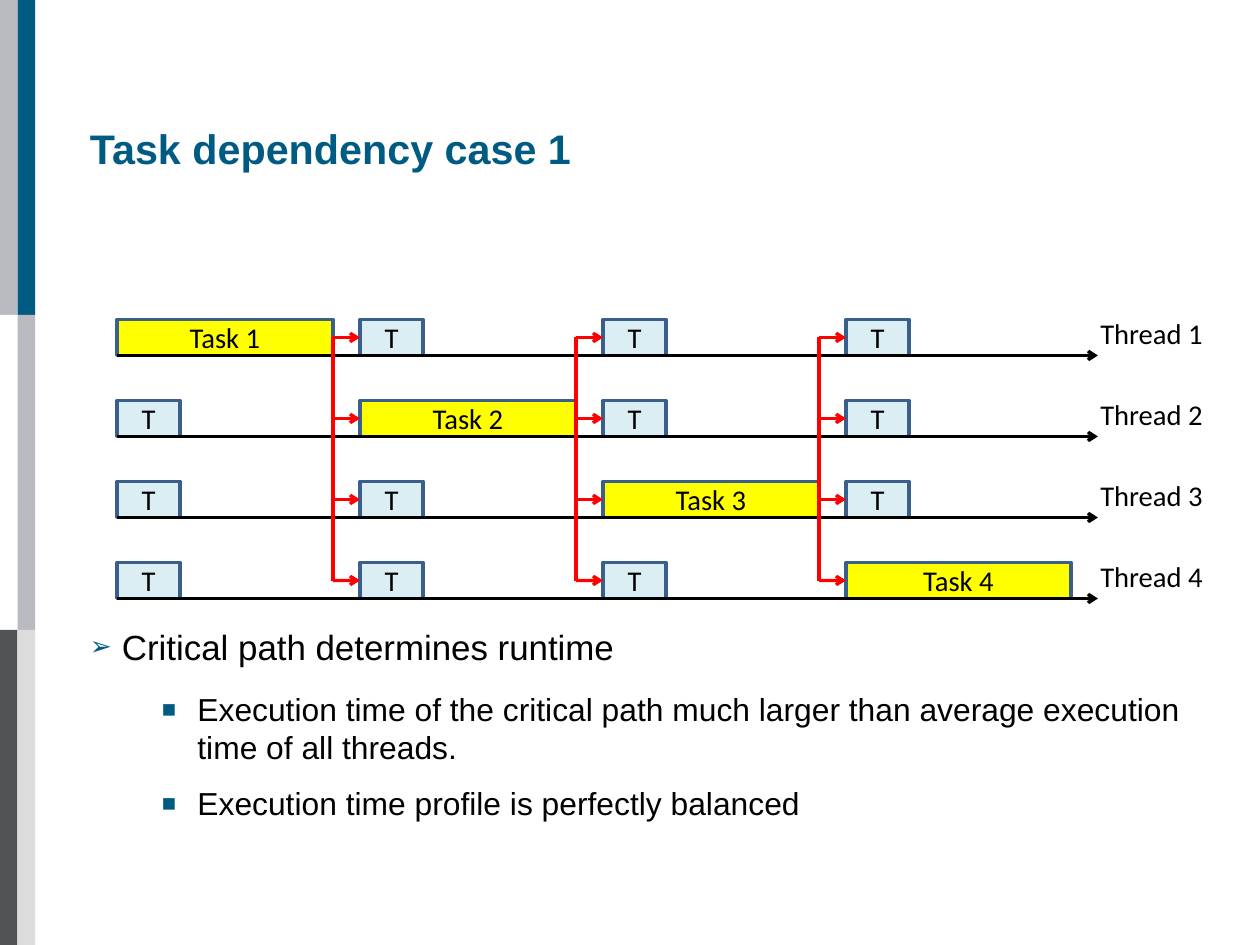
"""Build the slide on task dependency, with four threads on a time line."""
from pptx import Presentation
from pptx.dml.color import RGBColor
from pptx.enum.shapes import MSO_CONNECTOR as Conn, MSO_SHAPE as Form
from pptx.enum.text import MSO_ANCHOR as Anchor, PP_ALIGN as Align
from pptx.oxml.ns import qn
from pptx.util import Inches, Pt
from lxml.etree import SubElement as Sub


def color(target, code):
    if hasattr(target, "solid"):
        target.solid()
        target = target.fore_color
    target.rgb = RGBColor.from_string(code)


def link(x1, y1, x2, y2, code, arrow=True):
    line = shapes.add_connector(Conn.STRAIGHT, Inches(x1), Inches(y1), Inches(x2), Inches(y2))
    line.line.width = Pt(2)
    color(line.line.fill, code)
    if arrow:
        Sub(line.line._get_or_add_ln(), qn("a:tailEnd"), type="arrow")
    Sub(line._element.spPr, qn("a:effectLst"))
    return line


cm = 1 / 2.54
deck = Presentation()
deck.slide_width, deck.slide_height = Inches(28 * cm), Inches(21 * cm)
slide = deck.slides.add_slide(deck.slide_layouts[6])
shapes = slide.shapes

bars = [("B9BBC0", "005B82"), ("FFFFFF", "B9BBC0"), ("515355", "DCDCDC")]
bar_w, bar_h = 0.39 * cm, 7 * cm
for row, pair in enumerate(bars):
    for col, code in enumerate(pair):
        bar = shapes.add_shape(Form.RECTANGLE, Inches(col * bar_w), Inches(row * bar_h),
                               Inches(bar_w), Inches(bar_h))
        bar.shadow.inherit = False
        color(bar.fill, code)
        bar.line.fill.background()

title = shapes.add_textbox(Inches(2 * cm), Inches(1.8 * cm), Inches(25.2 * cm), Inches(3 * cm))
body = shapes.add_textbox(Inches(2 * cm), Inches(13.9 * cm), Inches(25.2 * cm), Inches(4.88 * cm))
for box in (title, body):
    frame = box.text_frame
    frame.word_wrap = True
    frame.margin_left = frame.margin_right = frame.margin_top = frame.margin_bottom = 0

title.text_frame.vertical_anchor = Anchor.MIDDLE
head = title.text_frame.paragraphs[0]
head.text = "Task dependency case 1"
head.font.name, head.font.size, head.font.bold = "Arial", Pt(26), True
color(head.font.color, "005B82")

count = 4
left, top = 2.6 * cm, 7.1 * cm
step_x, step_y = 5.4 * cm, 1.8 * cm
task_w, high = 4.8 * cm, 0.8 * cm
boxes = {}
for col in range(count):
    for row in range(count):
        main = row == col
        wide = 1.4 * cm
        if main:
            wide = 5 * cm if col == count - 1 else task_w
        box = shapes.add_shape(Form.RECTANGLE, Inches(left + col * step_x),
                               Inches(top + row * step_y), Inches(wide), Inches(high))
        box.shadow.inherit = False
        color(box.fill, "FFFF00" if main else "DBEEF4")
        color(box.line.fill, "3A5F8C")
        box.line.width = Pt(2)
        box.text_frame.vertical_anchor = Anchor.MIDDLE
        para = box.text_frame.paragraphs[0]
        para.text = f"Task {col + 1}" if main else "T"
        para.alignment = Align.CENTER
        para.font.name, para.font.size = "Calibri", Pt(18)
        color(para.font.color, "000000")
        boxes[row, col] = box

for row in range(count):
    y = top + row * step_y
    link(left, y + high, 24.4 * cm, y + high, "000000")
    label = shapes.add_textbox(Inches(24.2 * cm), Inches(y - 0.2 * cm), Inches(1.11), Inches(0.4))
    label.text_frame.word_wrap = False
    para = label.text_frame.paragraphs[0]
    para.text = f"Thread {row + 1}"
    para.font.name, para.font.size = "Calibri", Pt(18)
    color(para.font.color, "000000")

mid = top + high / 2
for col in range(count - 1):
    x = left + col * step_x + task_w
    for row in range(count):
        y = mid + row * step_y
        line = link(x, y, left + (col + 1) * step_x, y, "FF0000")
        if row == col:
            line.begin_connect(boxes[row, col], 3)
        line.end_connect(boxes[row, col + 1], 1)
    link(x, mid, x, mid + (count - 1) * step_y, "FF0000", arrow=False)

points = [
    ("Critical path determines runtime", 0, "➢", 0.28, 0.28, 22, 14.2),
    ("Execution time of the critical path much larger than average execution time of all threads.",
     1, "■", 0.94, 0.31, 20, 11.3),
    ("Execution time profile is perfectly balanced", 1, "■", 0.94, 0.31, 20, 11.3),
]
frame = body.text_frame
for i, (text, level, mark, edge, hang, size, after) in enumerate(points):
    para = frame.add_paragraph() if i else frame.paragraphs[0]
    para.text, para.level, para.space_after = text, level, Pt(after)
    props = para._p.get_or_add_pPr()
    props.set("marL", str(Inches(edge)))
    props.set("indent", str(-Inches(hang)))
    Sub(Sub(props, qn("a:buClr")), qn("a:srgbClr"), val="005B82")
    Sub(props, qn("a:buSzPct"), val="75000")
    Sub(props, qn("a:buFont"), typeface="Arial")
    Sub(props, qn("a:buChar"), char=mark)
    para.font.name, para.font.size = "Arial", Pt(size)
    color(para.font.color, "000000")

deck.save("out.pptx")
